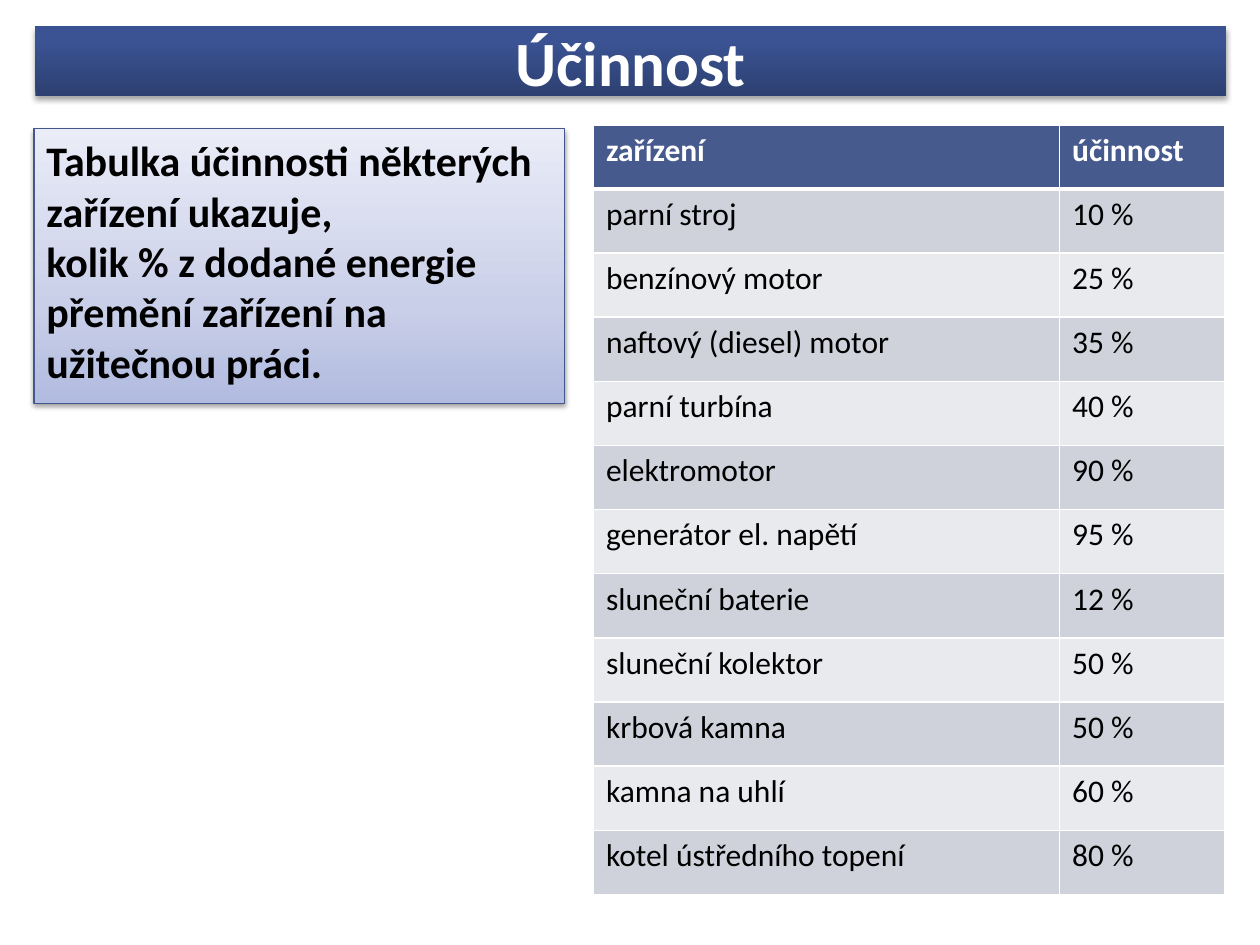
import pptx
import pptx.util
import pptx.dml.color
import pptx.enum.shapes
import pptx.enum.text
import pptx.oxml.ns
from dataclasses import dataclass
from lxml import etree

Inches, Pt = pptx.util.Inches, pptx.util.Pt
RGB = pptx.dml.color.RGBColor.from_string
qn = pptx.oxml.ns.qn


@dataclass
class Theme:
    font: str = "Calibri"
    white: str = "FFFFFF"
    black: str = "000000"
    edge: str = "44578C"
    head: str = "475A8D"
    bands: tuple = ("CFD2DB", "E9EAEE")
    bar: tuple = ((0, "2D4071"), (80, "3B5393"), (100, "395295"))
    note: tuple = ((0, "B2BBE0"), (35, "C9CFE8"), (100, "EAECF7"))
    title_size: int = 36
    note_size: int = 24
    cell_size: int = 18


theme = Theme()


def style(par, size, color, bold):
    par.font.name, par.font.size, par.font.bold = theme.font, Pt(size), bold
    par.font.color.rgb = RGB(color)


def panel(box, stops, alpha, drop):
    """Add a rectangle with an upward gradient and a soft shadow below."""
    shape = slide.shapes.add_shape(
        pptx.enum.shapes.MSO_SHAPE.RECTANGLE, *map(Inches, box))
    shape.fill.gradient()
    shape.fill.gradient_angle = 90
    props = shape._element.spPr
    ramp = props.find(qn("a:gradFill")).find(qn("a:gsLst"))
    for stop in list(ramp):
        ramp.remove(stop)
    for pos, color in stops:
        stop = etree.SubElement(ramp, qn("a:gs"), pos=str(pos * 1000))
        etree.SubElement(stop, qn("a:srgbClr"), val=color)
    shape.line.fill.background()
    shape.shadow.inherit = False
    shade = etree.SubElement(
        props.find(qn("a:effectLst")), qn("a:outerShdw"), blurRad=str(Pt(3.1)),
        dist=str(Pt(drop)), dir="5400000", rotWithShape="0")
    tint = etree.SubElement(shade, qn("a:srgbClr"), val=theme.black)
    etree.SubElement(tint, qn("a:alpha"), val=str(alpha * 1000))
    shape.text_frame.word_wrap = True
    return shape


deck = pptx.Presentation()
deck.slide_width, deck.slide_height = Inches(10), Inches(7.5)
slide = deck.slides.add_slide(deck.slide_layouts[6])

# Title bar
title = panel((0.28, 0.21, 9.45, 0.55), theme.bar, 35, 1.8)
title.text_frame.vertical_anchor = pptx.enum.text.MSO_ANCHOR.MIDDLE
par = title.text_frame.paragraphs[0]
par.text = "Účinnost"
par.alignment = pptx.enum.text.PP_ALIGN.CENTER
style(par, theme.title_size, theme.white, True)

# Efficiency table
rows = [
    ("zařízení", "účinnost"),
    ("parní stroj", "10 %"),
    ("benzínový motor", "25 %"),
    ("naftový (diesel) motor", "35 %"),
    ("parní turbína", "40 %"),
    ("elektromotor", "90 %"),
    ("generátor el. napětí", "95 %"),
    ("sluneční baterie", "12 %"),
    ("sluneční kolektor", "50 %"),
    ("krbová kamna", "50 %"),
    ("kamna na uhlí", "60 %"),
    ("kotel ústředního topení", "80 %"),
]
table = slide.shapes.add_table(
    len(rows), 2, Inches(4.71), Inches(0.99), Inches(5.01), Inches(6.11)).table
for col, width in zip(table.columns, (3.7, 1.31)):
    col.width = Inches(width)
for r, row in enumerate(rows):
    for c, text in enumerate(row):
        cell = table.cell(r, c)
        cell.text = text
        style(cell.text_frame.paragraphs[0], theme.cell_size,
              theme.black if r else theme.white, r == 0)
        cell.fill.solid()
        cell.fill.fore_color.rgb = RGB(theme.bands[(r - 1) % 2] if r else theme.head)
        # White grid, thicker under the header
        props = cell._tc.get_or_add_tcPr()
        for i, side in enumerate("LRTB"):
            thick = (r, side) in ((0, "B"), (1, "T"))
            line = etree.Element(qn("a:ln" + side), w=str(Pt(3 if thick else 1)))
            fill = etree.SubElement(line, qn("a:solidFill"))
            etree.SubElement(fill, qn("a:srgbClr"), val=theme.white)
            props.insert(i, line)

# Explanation
note = panel((0.27, 1.02, 4.21, 2.18), theme.note, 38, 1.6)
note.line.color.rgb = RGB(theme.edge)
note.line.width = Pt(0.75)
frame = note.text_frame
frame.vertical_anchor = pptx.enum.text.MSO_ANCHOR.TOP
frame.text = ("Tabulka účinnosti některých zařízení ukazuje,\n"
              "kolik % z dodané energie přemění zařízení na užitečnou práci.")
for par in frame.paragraphs:
    par.alignment = pptx.enum.text.PP_ALIGN.LEFT
    style(par, theme.note_size, theme.black, True)

deck.save("out.pptx")
